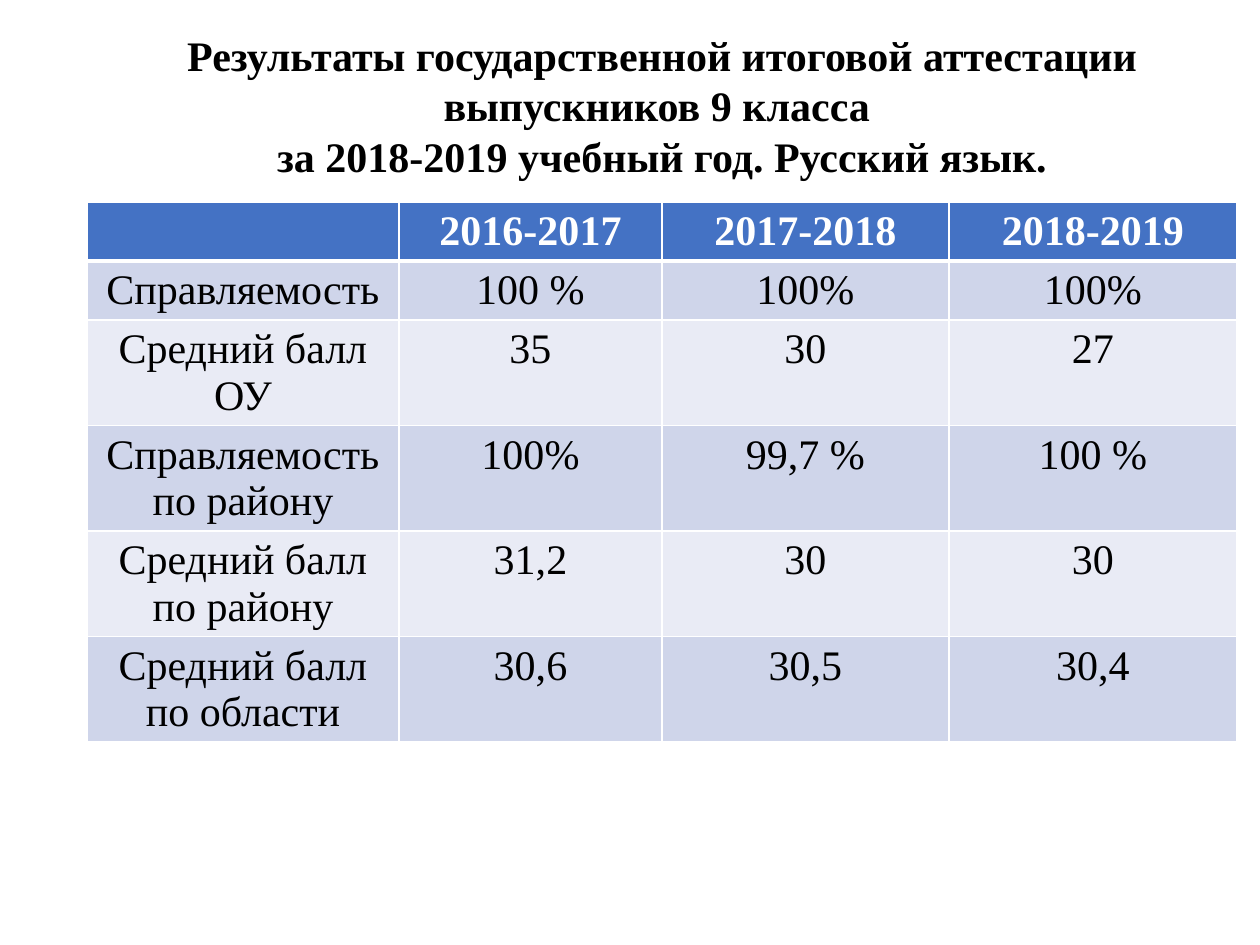
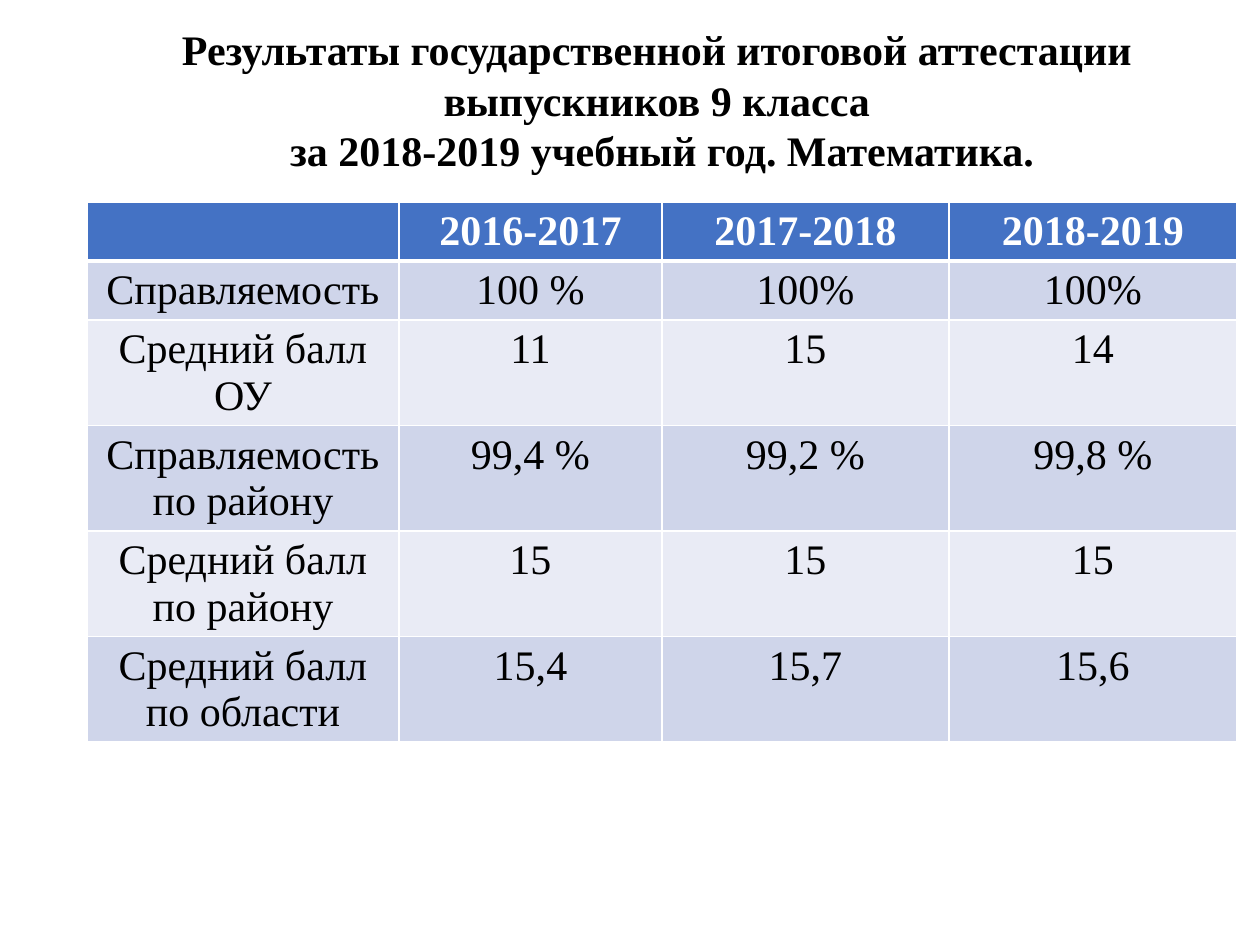
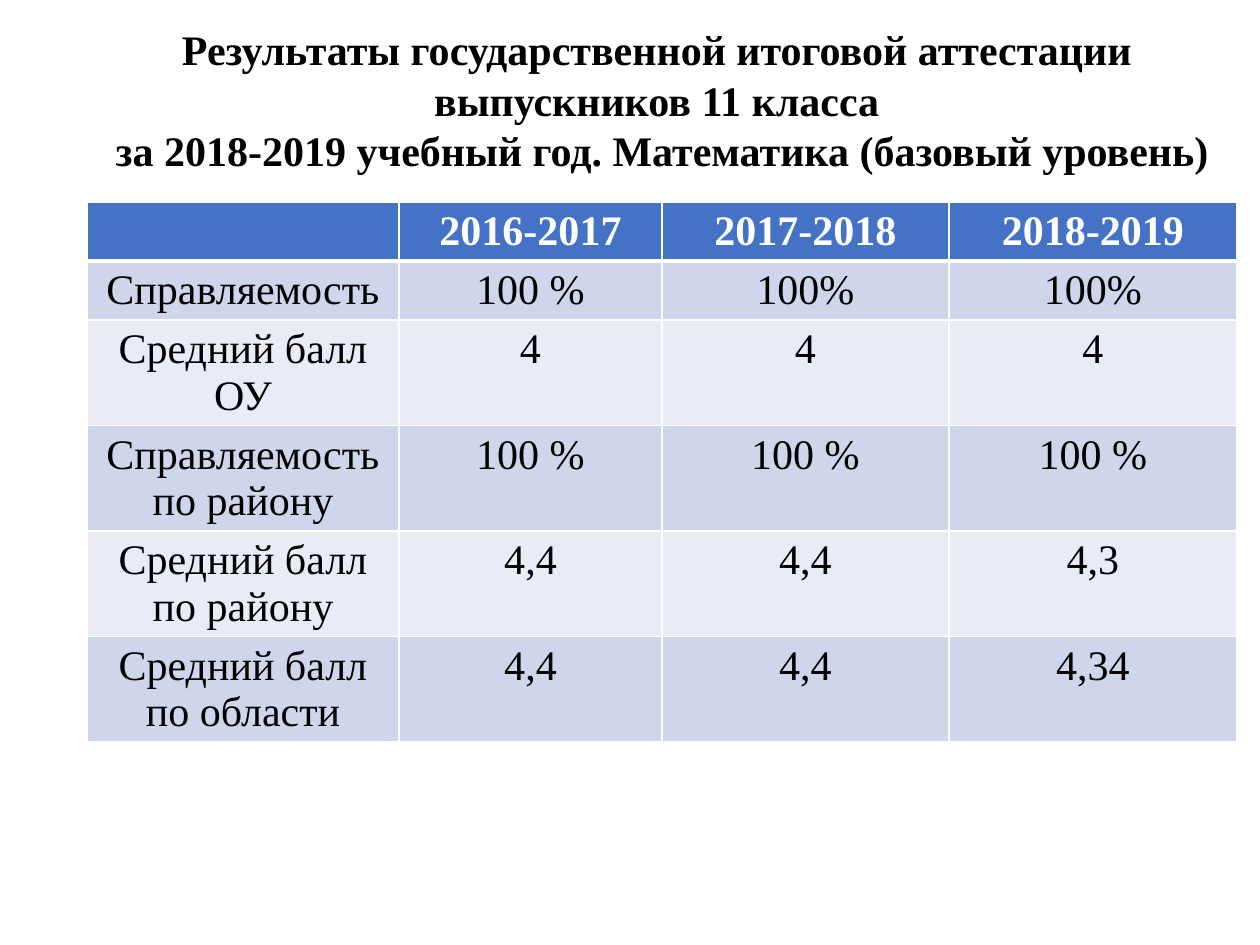
import pptx
import pptx.dml.color
import pptx.enum.text
import pptx.oxml
import pptx.oxml.ns
import pptx.util

RGBColor = pptx.dml.color.RGBColor
BLACK = RGBColor(0x00, 0x00, 0x00)
WHITE = RGBColor(0xFF, 0xFF, 0xFF)
HEADER_BLUE = RGBColor(0x44, 0x72, 0xC4)
BAND_DARK = RGBColor(0xCF, 0xD5, 0xEA)
BAND_LIGHT = RGBColor(0xE9, 0xEB, 0xF5)

PX_PER_INCH = 126
LEFT = 87
WIDTH = 1150
TITLE_BOTTOM = 219
TABLE_TOP = 202
TABLE_HEIGHT = 580
ROW_HEIGHT = 52
COLUMN_WIDTHS = (312, 263, 287, 288)

YEARS = ("2016-2017", "2017-2018", "2018-2019")
MEASURES = (
    "Справляемость",
    "Средний балл ОУ",
    "Справляемость по району",
    "Средний балл по району",
    "Средний балл по области",
)

# Title top, title and one row of yearly values per measure
RESULTS = (
    (
        37,
        "Результаты государственной итоговой аттестации выпускников 9 класса \v"
        "за 2018-2019 учебный год. Русский язык.",
        (
            ("100 %", "100%", "100%"),
            ("35", "30", "27"),
            ("100%", "99,7 %", "100 %"),
            ("31,2", "30", "30"),
            ("30,6", "30,5", "30,4"),
        ),
    ),
    (
        26,
        "Результаты государственной итоговой аттестации \vвыпускников 9 класса \v"
        "за 2018-2019 учебный год. Математика.",
        (
            ("100 %", "100%", "100%"),
            ("11", "15", "14"),
            ("99,4 %", "99,2 %", "99,8 %"),
            ("15", "15", "15"),
            ("15,4", "15,7", "15,6"),
        ),
    ),
    (
        26,
        "Результаты государственной итоговой аттестации \vвыпускников 11 класса \v"
        "за 2018-2019 учебный год. Математика (базовый уровень)",
        (
            ("100 %", "100%", "100%"),
            ("4", "4", "4"),
            ("100 %", "100 %", "100 %"),
            ("4,4", "4,4", "4,3"),
            ("4,4", "4,4", "4,34"),
        ),
    ),
)


def px(length):
    return pptx.util.Emu(round(length * 914400 / PX_PER_INCH))


def set_all(target, values):
    for name, value in values.items():
        setattr(target, name, value)


class Deck:
    font = {"name": "Times New Roman", "size": pptx.util.Pt(24)}

    def __init__(self):
        self.presentation = pptx.Presentation()
        set_all(self.presentation, {"slide_width": px(1260), "slide_height": px(945)})
        self.slide = None

    def add_slide(self):
        layout = self.presentation.slide_layouts[5]
        self.slide = self.presentation.slides.add_slide(layout)

    def format_text(self, frame, color, bold):
        for paragraph in frame.paragraphs:
            set_all(paragraph, {
                "alignment": pptx.enum.text.PP_ALIGN.CENTER,
                "line_spacing": 1.0,
            })
            for run in paragraph.runs:
                set_all(run.font, {**self.font, "bold": bold})
                run.font.color.rgb = color

    def title(self, text, top):
        heading = self.slide.shapes.title
        set_all(heading, {
            "left": px(LEFT), "top": px(top),
            "width": px(WIDTH), "height": px(TITLE_BOTTOM - top),
        })
        frame = heading.text_frame
        set_all(frame, {
            "text": text,
            "word_wrap": True,
            "auto_size": pptx.enum.text.MSO_AUTO_SIZE.NONE,
            "vertical_anchor": pptx.enum.text.MSO_ANCHOR.MIDDLE,
            "margin_top": px(6),
            "margin_bottom": px(52),
        })
        self.format_text(frame, BLACK, True)

    def borders(self, cell, widths):
        """Draw white cell borders; widths maps L, R, T and B to points."""
        properties = cell._tc.get_or_add_tcPr()
        for side, width in widths.items():
            properties.append(pptx.oxml.parse_xml(
                f'<a:ln{side} {pptx.oxml.ns.nsdecls("a")} w="{pptx.util.Pt(width)}">'
                f'<a:solidFill><a:srgbClr val="{WHITE}"/></a:solidFill></a:ln{side}>'
            ))

    def table(self, rows):
        frame = self.slide.shapes.add_table(
            len(rows), len(COLUMN_WIDTHS),
            px(LEFT), px(TABLE_TOP), px(WIDTH), px(TABLE_HEIGHT),
        )
        grid = frame.table
        for column, width in zip(grid.columns, COLUMN_WIDTHS):
            column.width = px(width)
        for index, values in enumerate(rows):
            grid.rows[index].height = px(ROW_HEIGHT)
            header = index == 0
            band = HEADER_BLUE if header else BAND_DARK if index % 2 else BAND_LIGHT
            widths = {"L": 1, "R": 1, "T": 3 if index == 1 else 1, "B": 3 if header else 1}
            for cell, value in zip(grid.rows[index].cells, values):
                cell.text = value
                self.format_text(cell.text_frame, WHITE if header else BLACK, header)
                self.borders(cell, widths)
                cell.fill.solid()
                cell.fill.fore_color.rgb = band
        frame.height = px(TABLE_HEIGHT)


def main():
    deck = Deck()
    for title_top, title, scores in RESULTS:
        deck.add_slide()
        deck.title(title, title_top)
        measured = [(measure, *values) for measure, values in zip(MEASURES, scores)]
        deck.table([("", *YEARS), *measured])
    deck.presentation.save("out.pptx")


if __name__ == "__main__":
    main()
